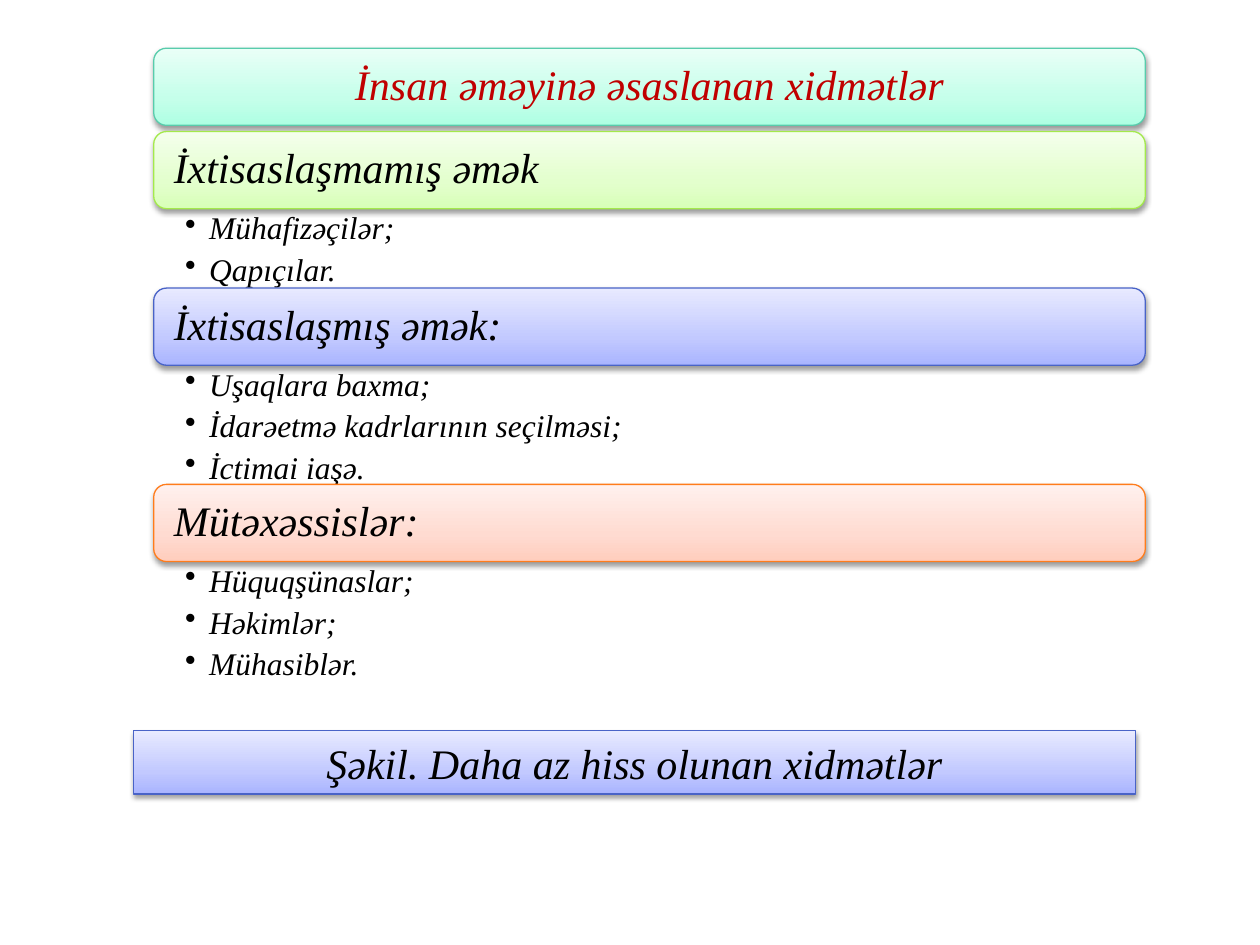
from lxml import etree
from pptx import Presentation
from pptx.dml.color import RGBColor
from pptx.enum.shapes import MSO_SHAPE
from pptx.enum.text import MSO_ANCHOR, PP_ALIGN
from pptx.oxml.ns import qn
from pptx.util import Inches, Pt

ROUNDED, RECTANGLE = MSO_SHAPE.ROUNDED_RECTANGLE, MSO_SHAPE.RECTANGLE
MIDDLE, TOP = MSO_ANCHOR.MIDDLE, MSO_ANCHOR.TOP
LEFT, CENTER = PP_ALIGN.LEFT, PP_ALIGN.CENTER

BLACK = RGBColor(0x00, 0x00, 0x00)
RED = RGBColor(0xC0, 0x00, 0x00)

# Each palette: outline, then gradient colours from bottom to top
MINT = [RGBColor.from_string(c) for c in ("58CCAC", "AEFFE3", "C5FFEA", "E9FFF7")]
GREEN = [RGBColor.from_string(c) for c in ("A4E94C", "D8FFB8", "E3FFCD", "F4FFEC")]
BLUE = [RGBColor.from_string(c) for c in ("4963C7", "A9B4FF", "C2C9FF", "E8EAFF")]
ORANGE = [RGBColor.from_string(c) for c in ("FF7C1B", "FFCDBD", "FFDBD1", "FFF1EE")]
GRADIENT_STOPS = (0, 35, 100)

# Lengths in hundredths of the slide's width (columns) and height (rows)
STACK_LEFT, STACK_WIDTH, STACK_TOP = 12.2, 78.7, 5.1
BAR_ROWS, TITLE_GAP, LINE_ROWS = 8.17, 0.65, 4.2

TITLE = "İnsan əməyinə əsaslanan xidmətlər"
SECTIONS = [
    ("İxtisaslaşmamış əmək", GREEN, ["Mühafizəçilər;", "Qapıçılar."]),
    ("İxtisaslaşmış əmək:", BLUE,
     ["Uşaqlara baxma;", "İdarəetmə kadrlarının seçilməsi;", "İctimai iaşə."]),
    ("Mütəxəssislər:", ORANGE, ["Hüquqşünaslar;", "Həkimlər;", "Mühasiblər."]),
]
CAPTION = "Şəkil. Daha az hiss olunan xidmətlər"


def add_child(parent, tag, **attributes):
    return etree.SubElement(parent, qn(tag), {k: str(v) for k, v in attributes.items()})


def write(paragraph, text, size=24, color=BLACK, align=LEFT, spacing=0.9, after=0):
    paragraph.alignment = align
    paragraph.line_spacing = spacing
    paragraph.space_after = Pt(after)
    run = paragraph.add_run()
    run.text = text
    font = run.font
    font.name, font.size, font.italic = "Times New Roman", Pt(size), True
    font.color.rgb = color


class SlideBuilder:
    def __init__(self, presentation):
        self.column = presentation.slide_width / 100
        self.row = presentation.slide_height / 100
        self.slide = presentation.slides.add_slide(presentation.slide_layouts[6])

    def box(self, left, top, width, height):
        return (round(left * self.column), round(top * self.row),
                round(width * self.column), round(height * self.row))

    def bar(self, text, palette, *place, outline=ROUNDED, **text_format):
        """Add a gradient bar with a soft shadow and one line of text."""
        shape = self.slide.shapes.add_shape(outline, *self.box(*place))
        line_color, *colors = palette
        shape.fill.gradient()
        shape.fill.gradient_angle = 90
        stops = shape.element.spPr.find(".//" + qn("a:gsLst"))
        for stop in list(stops):
            stops.remove(stop)
        for position, color in zip(GRADIENT_STOPS, colors):
            stop = add_child(stops, "a:gs", pos=position * 1000)
            add_child(stop, "a:srgbClr", val=color)
        shape.line.color.rgb = line_color
        shape.line.width = Pt(0.75)
        shape.shadow.inherit = False
        effects = shape.element.spPr.find(qn("a:effectLst"))
        shadow = add_child(effects, "a:outerShdw", blurRad=Pt(3.1), dist=Pt(1.6),
                           dir=90 * 60000, rotWithShape=0)
        add_child(add_child(shadow, "a:srgbClr", val=BLACK), "a:alpha", val=38000)
        frame = shape.text_frame
        frame.word_wrap = True
        frame.vertical_anchor = MIDDLE
        frame.margin_left = frame.margin_right = Inches(0.13)
        write(frame.paragraphs[0], text, **text_format)

    def bullets(self, items, *place):
        frame = self.slide.shapes.add_textbox(*self.box(*place)).text_frame
        frame.word_wrap = True
        frame.vertical_anchor = TOP
        frame.margin_left, frame.margin_right = Inches(0.25), Inches(0.14)
        frame.margin_top = frame.margin_bottom = Inches(0.03)
        for index, item in enumerate(items):
            paragraph = frame.add_paragraph() if index else frame.paragraphs[0]
            write(paragraph, item, size=18, after=4.3)
            paragraph.level = 1
            properties = paragraph._p.get_or_add_pPr()
            properties.set("marL", str(Inches(0.19)))
            properties.set("indent", str(-Inches(0.19)))
            add_child(properties, "a:buChar", char="•")


def main():
    presentation = Presentation()
    presentation.slide_width, presentation.slide_height = Inches(10), Inches(7.5)
    builder = SlideBuilder(presentation)

    top = STACK_TOP
    builder.bar(TITLE, MINT, STACK_LEFT, top, STACK_WIDTH, BAR_ROWS,
                color=RED, align=CENTER)
    top += BAR_ROWS + TITLE_GAP
    for heading, palette, items in SECTIONS:
        builder.bar(heading, palette, STACK_LEFT, top, STACK_WIDTH, BAR_ROWS)
        top += BAR_ROWS
        list_rows = LINE_ROWS * len(items)
        builder.bullets(items, STACK_LEFT, top, STACK_WIDTH, list_rows)
        top += list_rows

    builder.bar(CAPTION, BLUE, 10.6, 77.3, 79.5, 6.73,
                outline=RECTANGLE, align=CENTER, spacing=1.0)
    presentation.save("out.pptx")


if __name__ == "__main__":
    main()
